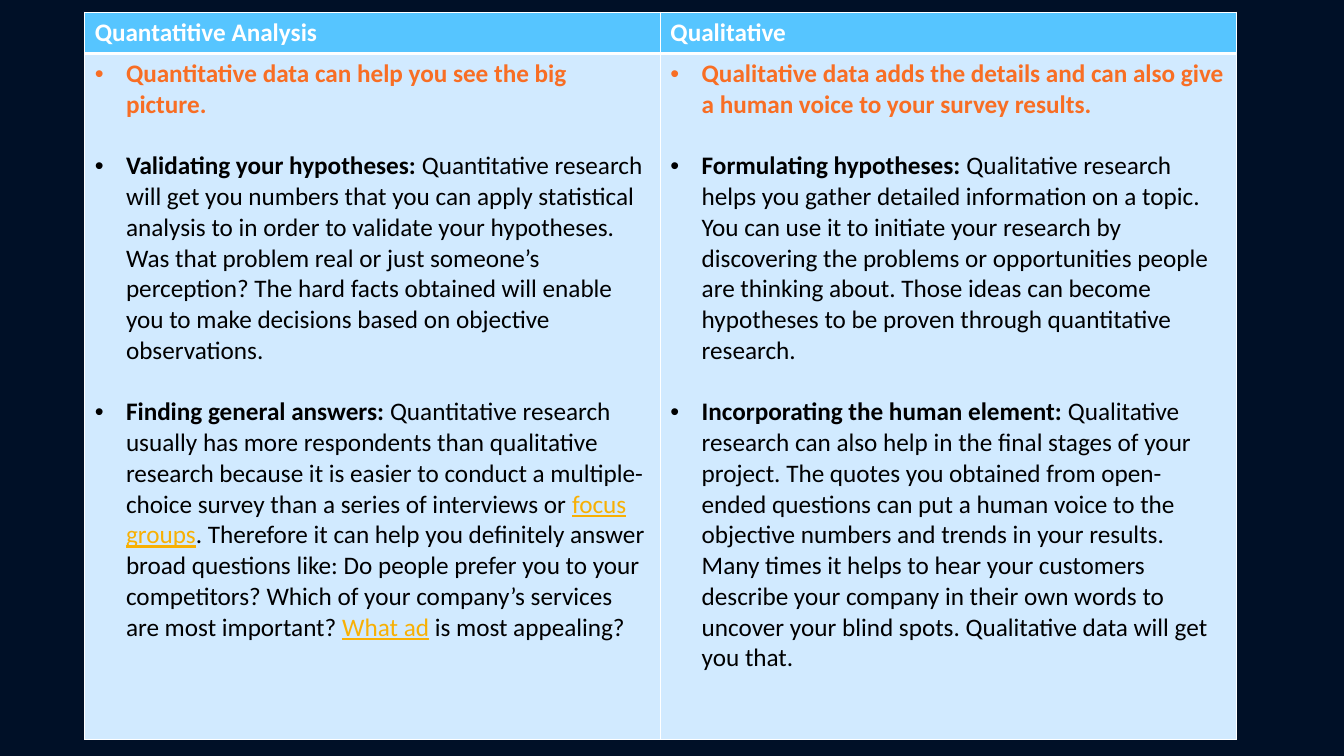
from dataclasses import dataclass

from lxml import etree
from pptx import Presentation
from pptx import util as u
from pptx.dml import color
from pptx.oxml import ns


@dataclass(frozen=True)
class Theme:
    font: str = "Calibri"
    size: int = 18
    paragraph_gap: int = 22
    background: str = "001027"
    header: str = "56C5FF"
    body: str = "D1EAFF"
    white: str = "FFFFFF"
    black: str = "000000"
    highlight: str = "F86E24"
    link: str = "F8B004"


THEME = Theme()
RUN_STYLES = {
    "header": (THEME.white, True, False),
    "summary": (THEME.highlight, True, False),
    "lead": (THEME.black, True, False),
    "plain": (THEME.black, False, False),
    "link": (THEME.link, False, True),
}

QUANTITATIVE = [
    [("Quantitative data can help you see the big picture.", "summary")],
    [("Validating your hypotheses:", "lead"),
     (" Quantitative research will get you numbers that you can apply statistical "
      "analysis to in order to validate your hypotheses. Was that problem real or just "
      "someone’s perception? The hard facts obtained will enable you to make decisions "
      "based on objective observations.", "plain")],
    [("Finding general answers:", "lead"),
     (" Quantitative research usually has more respondents than qualitative research "
      "because it is easier to conduct a multiple-choice survey than a series of "
      "interviews or ", "plain"),
     ("focus groups", "link"),
     (". Therefore it can help you definitely answer broad questions like: Do people "
      "prefer you to your competitors? Which of your company’s services are most "
      "important? ", "plain"),
     ("What ad", "link"),
     (" is most appealing?", "plain")],
]
QUALITATIVE = [
    [("Qualitative data adds the details and can also give a human voice to your "
      "survey results.", "summary")],
    [("Formulating hypotheses:", "lead"),
     (" Qualitative research helps you gather detailed information on a topic. You can "
      "use it to initiate your research by discovering the problems or opportunities "
      "people are thinking about. Those ideas can become hypotheses to be proven "
      "through quantitative research.", "plain")],
    [("Incorporating the human element:", "lead"),
     (" Qualitative research can also help in the final stages of your project. The "
      "quotes you obtained from open-ended questions can put a human voice to the "
      "objective numbers and trends in your results. Many times it helps to hear your "
      "customers describe your company in their own words to uncover your blind spots. "
      "Qualitative data will get you that.", "plain")],
]
COMPARISON = [("Quantatitive Analysis", QUANTITATIVE), ("Qualitative", QUALITATIVE)]


def rgb(value):
    return color.RGBColor.from_string(value)


def add_runs(paragraph, pieces):
    for wording, style in pieces:
        run = paragraph.add_run()
        run.text = wording
        ink, bold, underline = RUN_STYLES[style]
        run.font.name = THEME.font
        run.font.size = u.Pt(THEME.size)
        run.font.color.rgb = rgb(ink)
        run.font.bold = bold
        run.font.underline = underline


def add_bullet(paragraph):
    properties = paragraph._p.get_or_add_pPr()
    properties.set("marL", str(u.Inches(0.31)))
    properties.set("indent", str(-u.Inches(0.31)))
    etree.SubElement(properties, ns.qn("a:buFont"), typeface="Arial")
    etree.SubElement(properties, ns.qn("a:buChar"), char="•")


def style_cell(cell, fill, widths):
    properties = cell._tc.get_or_add_tcPr()
    for side, width in widths.items():
        border = etree.SubElement(properties, ns.qn(f"a:ln{side}"), w=str(u.Pt(width)))
        solid = etree.SubElement(border, ns.qn("a:solidFill"))
        etree.SubElement(solid, ns.qn("a:srgbClr"), val=THEME.white)
    cell.fill.solid()
    cell.fill.fore_color.rgb = rgb(fill)


def fill_header(cell, title):
    style_cell(cell, THEME.header, {"L": 1, "R": 1, "T": 1, "B": 3})
    add_runs(cell.text_frame.paragraphs[0], [(title, "header")])


def fill_body(cell, points):
    style_cell(cell, THEME.body, {"L": 1, "R": 1, "T": 3, "B": 1})
    frame = cell.text_frame
    for number, pieces in enumerate(points):
        paragraph = frame.add_paragraph() if number else frame.paragraphs[0]
        add_bullet(paragraph)
        if number:
            paragraph.space_before = u.Pt(THEME.paragraph_gap)
        add_runs(paragraph, pieces)


def add_comparison(slide):
    table = slide.shapes.add_table(
        2, len(COMPARISON), u.Inches(0.84), u.Inches(0.12), u.Inches(11.42), u.Inches(7.22)
    ).table
    table.rows[0].height = u.Inches(0.41)
    table.rows[1].height = u.Inches(6.81)
    for column, (title, points) in enumerate(COMPARISON):
        fill_header(table.cell(0, column), title)
        fill_body(table.cell(1, column), points)


def main():
    deck = Presentation()
    deck.slide_width, deck.slide_height = u.Inches(13.33), u.Inches(7.5)
    slide = deck.slides.add_slide(deck.slide_layouts[6])
    slide.background.fill.solid()
    slide.background.fill.fore_color.rgb = rgb(THEME.background)
    add_comparison(slide)
    deck.save("out.pptx")


if __name__ == "__main__":
    main()
